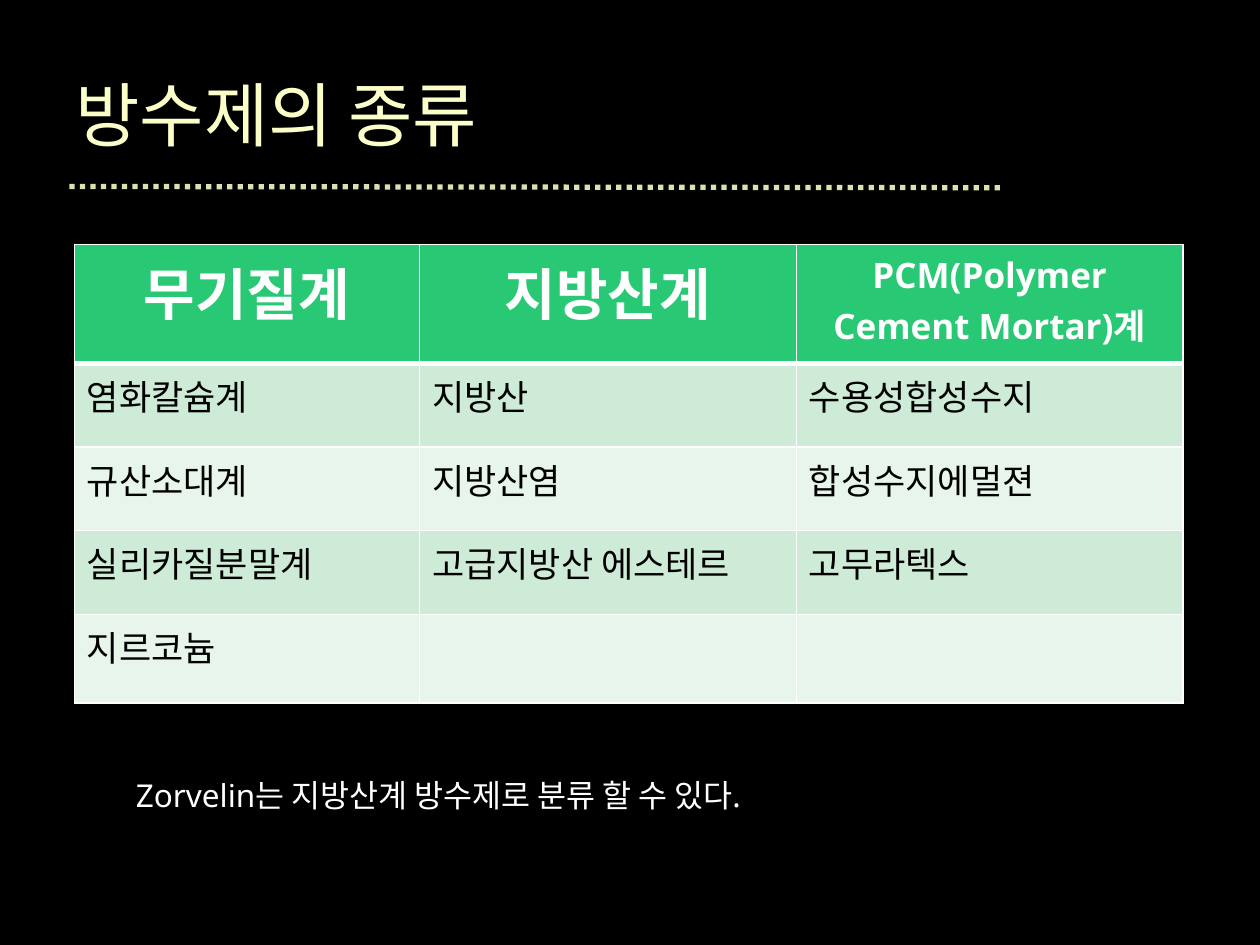
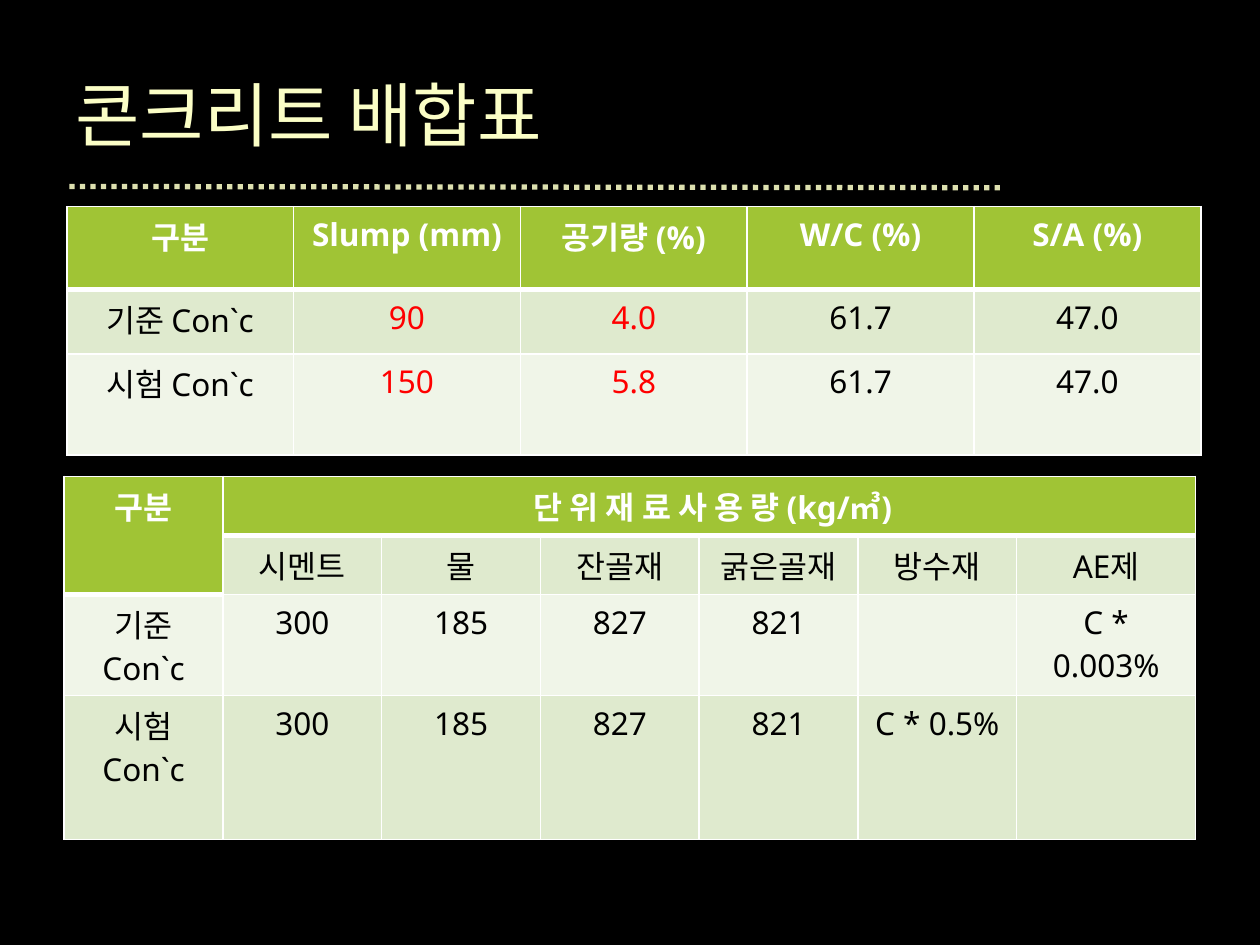
from dataclasses import dataclass
from lxml.etree import SubElement as Sub
from pptx import Presentation
from pptx.dml.color import RGBColor as Rgb
from pptx.enum.dml import MSO_LINE as Dash
from pptx.enum.shapes import MSO_CONNECTOR as Conn
from pptx.enum.text import MSO_ANCHOR as Anchor, MSO_AUTO_SIZE as Auto, PP_ALIGN as Align
from pptx.oxml.ns import qn
from pptx.util import Inches, Pt

WIDE, TALL = Inches(10), Inches(7.5)
COLS, ROWS = 100, 75


@dataclass(frozen=True)
class Theme:
    back: str = "000000"
    ink: str = "000000"
    white: str = "FFFFFF"
    red: str = "FF0000"
    rule: str = "DDE0AF"
    glow: tuple = ("FBFEC6", "FFFFFF")
    green: tuple = ("28C874", "CDEBD6", "E8F5EB")
    lime: tuple = ("A0C435", "DFEACE", "F0F5E8")
    head: str = "Arial"
    body: str = "Noto Sans"
    title: int = 40
    big: int = 32
    mid: int = 20
    base: int = 18
    thin: int = 1
    thick: int = 3


THEME = Theme()


def place(x, y, w, h):
    return (int(WIDE * x / COLS), int(TALL * y / ROWS),
            int(WIDE * w / COLS), int(TALL * h / ROWS))


def style(run, size, color=None, **extra):
    look = {"name": THEME.body, "size": Pt(size), **extra}
    for key, value in look.items():
        setattr(run.font, key, value)
    if color:
        run.font.color.rgb = Rgb.from_string(color)


def edge(cell, sides):
    props = cell._tc.get_or_add_tcPr()
    for side, width in sides.items():
        line = Sub(props, qn(f"a:ln{side}"), w=str(Pt(width)))
        Sub(Sub(line, qn("a:solidFill")), qn("a:srgbClr"), val=THEME.white)


def header(slide, text):
    title = slide.shapes.title
    title.left, title.top, title.width, title.height = place(5, 3.9, 74.7, 10.2)
    frame = title.text_frame
    frame.vertical_anchor = Anchor.MIDDLE
    par = frame.paragraphs[0]
    par.alignment = Align.LEFT
    run = par.add_run()
    run.text = text
    style(run, THEME.title, name=THEME.head)
    fill = run.font.fill
    fill.gradient()
    fill.gradient_angle = 270
    for stop, color in zip(fill.gradient_stops, THEME.glow):
        stop.color.rgb = Rgb.from_string(color)

    x, y, w, h = place(5.5, 14.8, 74.2, 0.1)
    rule = slide.shapes.add_connector(Conn.STRAIGHT, x, y, x + w, y + h)
    rule.line.color.rgb = Rgb.from_string(THEME.rule)
    rule.line.width = Pt(THEME.thick)
    rule.line.dash_style = Dash.ROUND_DOT
    Sub(rule._element.spPr, qn("a:effectLst"))


def grid(slide, box, cols, rows, data, tones, size, heads=None, sizes=(),
         center=True, hot=(), inset=None, spans=()):
    x, y, w, h = place(*box)
    table = slide.shapes.add_table(len(rows), len(cols), x, y, w, h).table
    table.first_row = table.horz_banding = False
    for col, part in zip(table.columns, cols):
        col.width = int(w * part / sum(cols))
    for row, part in zip(table.rows, rows):
        row.height = int(h * part / sum(rows))
    for first, last in spans:
        table.cell(*first).merge(table.cell(*last))

    heads = heads or [1] * len(cols)
    for r, line in enumerate(data):
        for c, text in enumerate(line):
            cell = table.cell(r, c)
            top = r < heads[c]
            edge(cell, {"L": THEME.thin, "R": THEME.thin,
                        "T": THEME.thick if r == heads[c] else THEME.thin,
                        "B": THEME.thick if top else THEME.thin})
            cell.fill.solid()
            tone = 0 if top else 2 - r % 2
            cell.fill.fore_color.rgb = Rgb.from_string(tones[tone])
            if inset:
                for side in ("left", "right", "top", "bottom"):
                    setattr(cell, f"margin_{side}", inset)
            if not text:
                continue
            par = cell.text_frame.paragraphs[0]
            par.alignment = Align.CENTER if center or top else Align.LEFT
            run = par.add_run()
            run.text = text
            color = THEME.white if top else THEME.red if c in hot else THEME.ink
            style(run, sizes[c] if top and sizes else size, color, bold=top)


def note(slide, box, text):
    shape = slide.shapes.add_textbox(*place(*box))
    frame = shape.text_frame
    frame.word_wrap = False
    frame.auto_size = Auto.SHAPE_TO_FIT_TEXT
    run = frame.paragraphs[0].add_run()
    run.text = text
    style(run, THEME.base, THEME.white)


def kinds(slide):
    header(slide, "방수제의 종류")
    data = [
        ["무기질계", "지방산계", "PCM(Polymer Cement Mortar)계"],
        ["염화칼슘계", "지방산", "수용성합성수지"],
        ["규산소대계", "지방산염", "합성수지에멀젼"],
        ["실리카질분말계", "고급지방산 에스테르", "고무라텍스"],
        ["지르코늄", "", ""],
    ]
    grid(slide, (5.9, 19.4, 88, 36.4), [27.4, 29.9, 30.7],
         [9.4, 6.6, 6.6, 6.6, 7], data, THEME.green, THEME.mid,
         sizes=(THEME.big, THEME.big, THEME.mid), center=False)
    note(slide, (9.8, 61.1, 55.1, 4), "Zorvelin는 지방산계 방수제로 분류 할 수 있다.")


def mixes(slide):
    header(slide, "콘크리트 배합표")
    tests = [
        ["구분", "Slump (mm)", "공기량 (%)", "W/C (%)", "S/A (%)"],
        ["기준 Con`c", "90", "4.0", "61.7", "47.0"],
        ["시험 Con`c", "150", "5.8", "61.7", "47.0"],
    ]
    grid(slide, (5.3, 16.4, 90, 19.7), [1] * 5, [6.6, 5.1, 8], tests,
         THEME.lime, THEME.base, hot=(1, 2), inset=Inches(0.05))
    parts = [
        ["구분", " 단 위 재 료 사 용 량 (kg/㎥)"] + [""] * 5,
        ["", "시멘트", "물", "잔골재", "굵은골재", "방수재", "AE제"],
        ["기준 Con`c", "300", "185", "827", "821", "", "C * 0.003%"],
        ["시험Con`c", "300", "185", "827", "821", "C * 0.5%", ""],
    ]
    grid(slide, (5.1, 37.8, 89.8, 28.8), [12.6] * 6 + [14.2],
         [4.7, 4.7, 8, 11.4], parts, THEME.lime, THEME.base,
         heads=[2] + [1] * 6, spans=[((0, 0), (1, 0)), ((0, 1), (0, 6))])


def main():
    deck = Presentation()
    deck.slide_width, deck.slide_height = WIDE, TALL
    fill = deck.slide_master.background.fill
    fill.solid()
    fill.fore_color.rgb = Rgb.from_string(THEME.back)
    for build in (kinds, mixes):
        build(deck.slides.add_slide(deck.slide_layouts[5]))
    deck.save("out.pptx")


if __name__ == "__main__":
    main()
